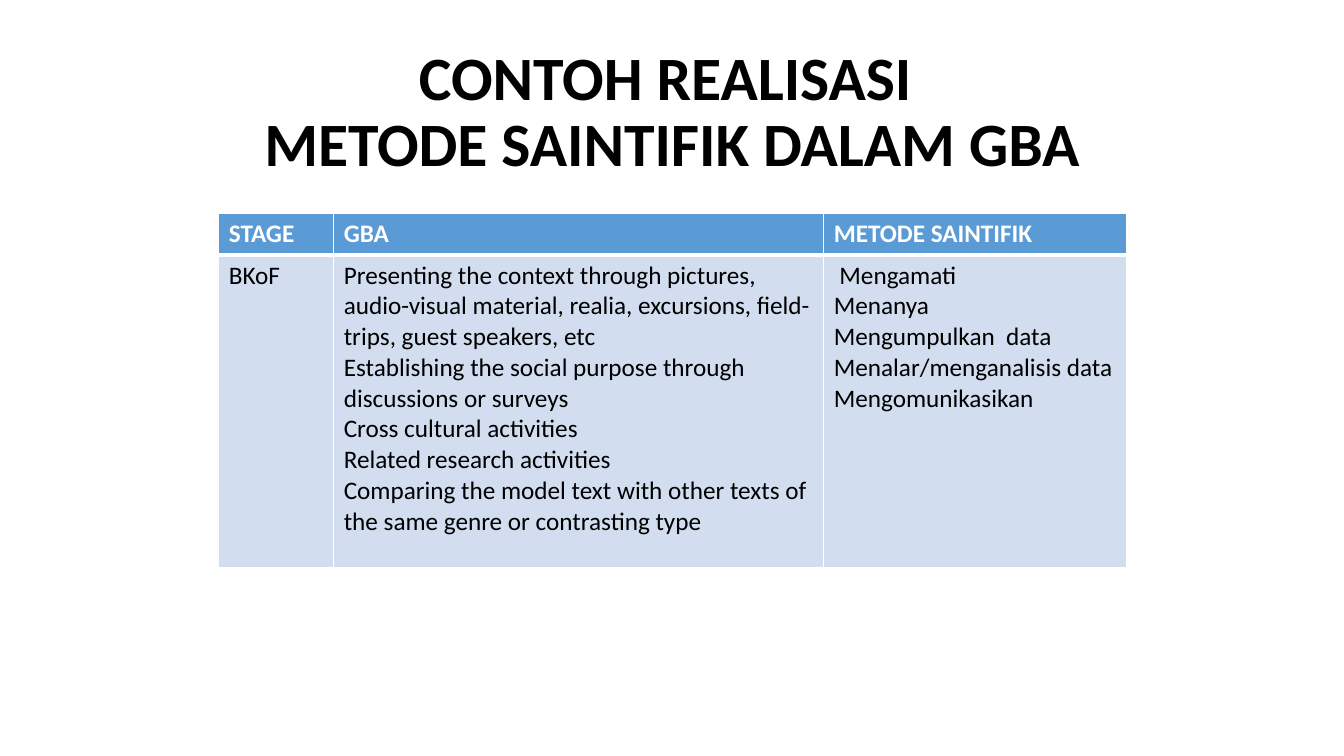
from lxml.etree import SubElement
from pptx import Presentation
from pptx.dml.color import RGBColor
from pptx.enum.text import MSO_ANCHOR, PP_ALIGN
from pptx.oxml.ns import qn
from pptx.util import Inches, Pt

BLACK = RGBColor(0x00, 0x00, 0x00)
WHITE = RGBColor(0xFF, 0xFF, 0xFF)
HEADER_BLUE = RGBColor(0x5B, 0x9B, 0xD5)
BODY_BLUE = RGBColor(0xD2, 0xDE, 0xEF)
FONT = "Calibri"

TITLE_LINES = ["CONTOH REALISASI ", "METODE SAINTIFIK DALAM GBA"]
COLUMN_WIDTHS = [1.14, 4.86, 3]
ROW_HEIGHTS = [0.41, 3.1]
ROWS = [
    [["STAGE"], ["GBA"], ["METODE SAINTIFIK"]],
    [
        ["BKoF"],
        [
            "Presenting the context through pictures, audio-visual material, "
            "realia, excursions, field-trips, guest speakers, etc",
            "Establishing the social purpose through discussions or surveys",
            "Cross cultural activities",
            "Related research activities",
            "Comparing the model text with other texts of the same genre "
            "or contrasting type",
        ],
        [
            " Mengamati",
            "Menanya",
            "Mengumpulkan  data",
            "Menalar/menganalisis data",
            "Mengomunikasikan",
        ],
    ],
]


def add_run(p, text, size, color, bold):
    """Append one formatted run to a paragraph."""
    r = p.add_run()
    r.text = text
    r.font.name = FONT
    r.font.size = Pt(size)
    r.font.bold = bold
    r.font.color.rgb = color


def add_title(slide, left, top, width, height):
    """Place the centred two-line title in the given box."""
    box = slide.shapes.add_textbox(Inches(left), Inches(top), Inches(width), Inches(height))
    tf = box.text_frame
    tf.word_wrap = True
    tf.vertical_anchor = MSO_ANCHOR.MIDDLE
    p = tf.paragraphs[0]
    p.alignment = PP_ALIGN.CENTER
    p.line_spacing = 0.9
    for i, line in enumerate(TITLE_LINES):
        if i:
            p.add_line_break()
        add_run(p, line, 44, BLACK, True)


def set_borders(cell, top, bottom):
    """Draw white borders around a cell, with 1 pt sides."""
    tc_pr = cell._tc.get_or_add_tcPr()
    for side, width in (("L", 1), ("R", 1), ("T", top), ("B", bottom)):
        ln = SubElement(tc_pr, qn(f"a:ln{side}"), w=str(Pt(width)))
        fill = SubElement(ln, qn("a:solidFill"))
        SubElement(fill, qn("a:srgbClr"), val=str(WHITE))


def fill_cell(cell, lines, is_header):
    """Write the paragraphs of one cell and style it."""
    set_borders(cell, 1 if is_header else 3, 3 if is_header else 1)
    cell.fill.solid()
    cell.fill.fore_color.rgb = HEADER_BLUE if is_header else BODY_BLUE
    tf = cell.text_frame
    for i, line in enumerate(lines):
        p = tf.add_paragraph() if i else tf.paragraphs[0]
        add_run(p, line, 18, WHITE if is_header else BLACK, is_header)


def add_stage_table(slide, left, top):
    """Place the table of stages with its corner at the given point."""
    frame = slide.shapes.add_table(
        len(ROWS), len(COLUMN_WIDTHS), Inches(left), Inches(top),
        Inches(sum(COLUMN_WIDTHS)), Inches(sum(ROW_HEIGHTS)))
    table = frame.table
    for column, width in zip(table.columns, COLUMN_WIDTHS):
        column.width = Inches(width)
    for row, height in zip(table.rows, ROW_HEIGHTS):
        row.height = Inches(height)
    for i, row in enumerate(ROWS):
        for j, lines in enumerate(row):
            fill_cell(table.cell(i, j), lines, i == 0)


def main():
    """Build the slide and save it."""
    prs = Presentation()
    prs.slide_width, prs.slide_height = Inches(13.33), Inches(7.5)
    s = prs.slides.add_slide(prs.slide_layouts[6])
    add_title(s, 0.92, 0.4, 11.5, 1.45)
    add_stage_table(s, 2.17, 2.12)
    prs.save("out.pptx")


if __name__ == "__main__":
    main()
